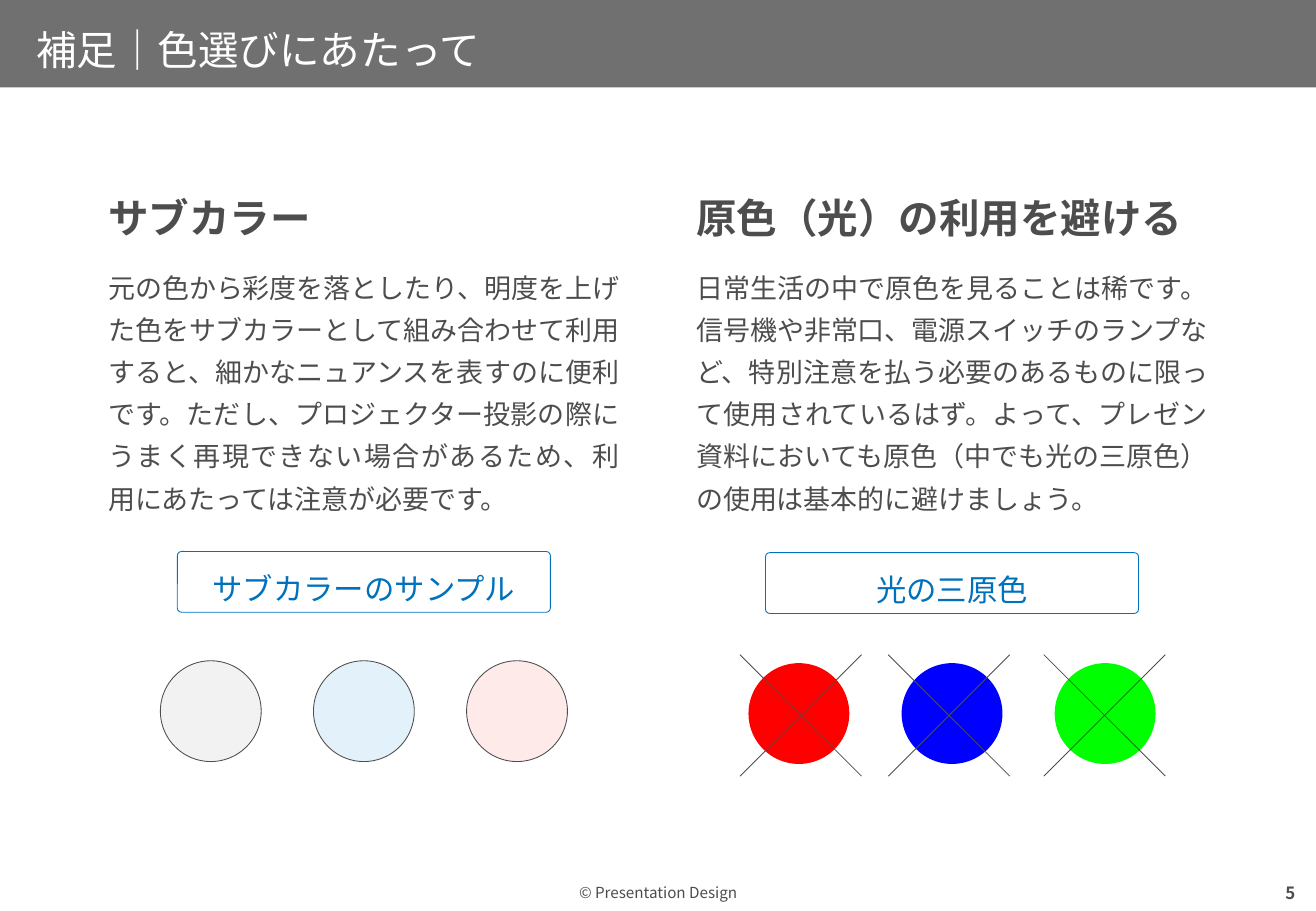
from pptx import Presentation, util as u
from pptx.dml.color import RGBColor
from pptx.enum import lang, shapes, text
from pptx.oxml.ns import qn
from lxml import etree

COLORS = {
    "ink": "4D4D4D", "white": "FFFFFF", "accent": "0071BC",
    "pale_gray": "F2F2F2", "pale_blue": "E2F1FA", "pale_pink": "FFEAEA",
    "red": "FF0000", "blue": "0000FF", "green": "00FF00",
}
SHAPE = shapes.MSO_SHAPE
ALIGN = text.PP_ALIGN
ANCHOR = text.MSO_ANCHOR
SIZING = text.MSO_AUTO_SIZE


class Deck:
    """Holds the style and the current slide, and draws each kind of element."""

    font = "Noto Sans CJK JP"
    hairline = u.Pt(0.5)

    def __init__(self, width, height):
        self.prs = Presentation()
        self.prs.slide_width = u.Inches(width)
        self.prs.slide_height = u.Inches(height)
        self.slide = self.prs.slides.add_slide(self.prs.slide_layouts[5])

    def color(self, name):
        return RGBColor.from_string(COLORS[name])

    def set_text(self, sp, paragraphs, color="ink", align=ALIGN.LEFT, spacing=1.0, after=0,
                 anchor=ANCHOR.TOP, insets=(0, 0, 0, 0), sizing=SIZING.NONE):
        tf = sp.text_frame
        tf.word_wrap = True
        tf.auto_size = sizing
        tf.vertical_anchor = anchor
        tf.margin_left, tf.margin_top, tf.margin_right, tf.margin_bottom = map(u.Inches, insets)
        tf.text = "\n".join(words for words, size, bold in paragraphs)
        for p, (words, size, bold) in zip(tf.paragraphs, paragraphs):
            p.alignment = align
            p.line_spacing = spacing
            p.space_before, p.space_after = u.Pt(0), u.Pt(after)
            for r in p.runs:
                r.font.size, r.font.bold = u.Pt(size), bold
                r.font.color.rgb = self.color(color)
                r.font.name = self.font
                r.font.language_id = lang.MSO_LANGUAGE_ID.JAPANESE
                etree.SubElement(r.font._element, qn("a:ea"), typeface=self.font)

    def title(self, words, *box):
        sp = self.slide.shapes.title
        sp.left, sp.top, sp.width, sp.height = map(u.Inches, box)
        self.set_text(sp, [(words, 24, False)], "white", spacing=1.1, anchor=ANCHOR.MIDDLE)

    def textbox(self, box, paragraphs, **style):
        sp = self.slide.shapes.add_textbox(*map(u.Inches, box))
        self.set_text(sp, paragraphs, **style)

    def shape(self, kind, box, fill=None, line=None):
        sp = self.slide.shapes.add_shape(kind, *map(u.Inches, box))
        sp.shadow.inherit = False
        if fill:
            sp.fill.solid()
            sp.fill.fore_color.rgb = self.color(fill)
        else:
            sp.fill.background()
        if line:
            sp.line.color.rgb = self.color(line)
            sp.line.width = self.hairline
        else:
            sp.line.fill.background()
        return sp

    def band(self, height, opacity):
        sp = self.shape(SHAPE.RECTANGLE, (0, 0, 10.83, height), "ink")
        rgb = sp._element.spPr.find(".//" + qn("a:srgbClr"))
        etree.SubElement(rgb, qn("a:alpha"), val=str(opacity * 1000))
        self.slide.shapes._spTree.insert(2, sp._element)

    def label(self, words, left, top):
        sp = self.shape(SHAPE.ROUNDED_RECTANGLE, (left, top, 3.07, 0.5), line="accent")
        sp.adjustments[0] = 0.07
        self.set_text(sp, [(words, 18, False)], "accent", ALIGN.CENTER, 1.2,
                      anchor=ANCHOR.MIDDLE, insets=(0.2, 0.08, 0.2, 0.04),
                      sizing=SIZING.SHAPE_TO_FIT_TEXT)

    def circles(self, left, top, fills, line=None):
        for i, fill in enumerate(fills):
            self.shape(SHAPE.OVAL, (left + 1.26 * i, top, 0.83, 0.83), fill, line)

    def cross(self, left, top, size=1):
        group = self.slide.shapes.add_group_shape()
        right, bottom = left + size, top + size
        for start in (right, left):
            end = left + right - start
            ends = map(u.Inches, (start, bottom, end, top))
            line = group.shapes.add_connector(shapes.MSO_CONNECTOR.STRAIGHT, *ends)
            line.line.color.rgb = self.color("ink")
            line.line.width = self.hairline
            etree.SubElement(line._element.spPr, qn("a:effectLst"))

    def column(self, left, heading, body):
        self.textbox((left, 1.47, 4.21, 2.79), [(heading, 24, True), (body, 16, False)],
                     align=ALIGN.JUSTIFY, spacing=1.3, after=12)


def main():
    deck = Deck(10.83, 7.5)
    deck.band(0.72, 80)
    deck.title("補足｜色選びにあたって", 0.3, 0.17, 10.24, 0.43)
    deck.textbox((3.72, 7.21, 3.39, 0.2), [("© Presentation Design", 9, False)],
                 align=ALIGN.CENTER, spacing=1.4, after=12)
    deck.textbox((8.13, 7.21, 2.53, 0.28), [("5", 10, True)],
                 align=ALIGN.RIGHT, anchor=ANCHOR.MIDDLE)

    deck.column(0.89, "サブカラー",
                "元の色から彩度を落としたり、明度を上げた色をサブカラーとして組み合わせて利用すると、"
                "細かなニュアンスを表すのに便利です。ただし、プロジェクター投影の際に"
                "うまく再現できない場合があるため、利用にあたっては注意が必要です。")
    deck.label("サブカラーのサンプル", 1.46, 4.54)
    deck.circles(1.32, 5.44, ("pale_gray", "pale_blue", "pale_pink"), "ink")

    deck.column(5.73, "原色（光）の利用を避ける",
                "日常生活の中で原色を見ることは稀です。信号機や非常口、電源スイッチのランプなど、"
                "特別注意を払う必要のあるものに限って使用されているはず。よって、"
                "プレゼン資料においても原色（中でも光の三原色）の使用は基本的に避けましょう。")
    deck.label("光の三原色", 6.3, 4.55)
    deck.circles(6.16, 5.46, ("red", "blue", "green"))
    for left in (6.09, 7.31, 8.59):
        deck.cross(left, 5.39)

    deck.prs.save("out.pptx")


if __name__ == "__main__":
    main()
